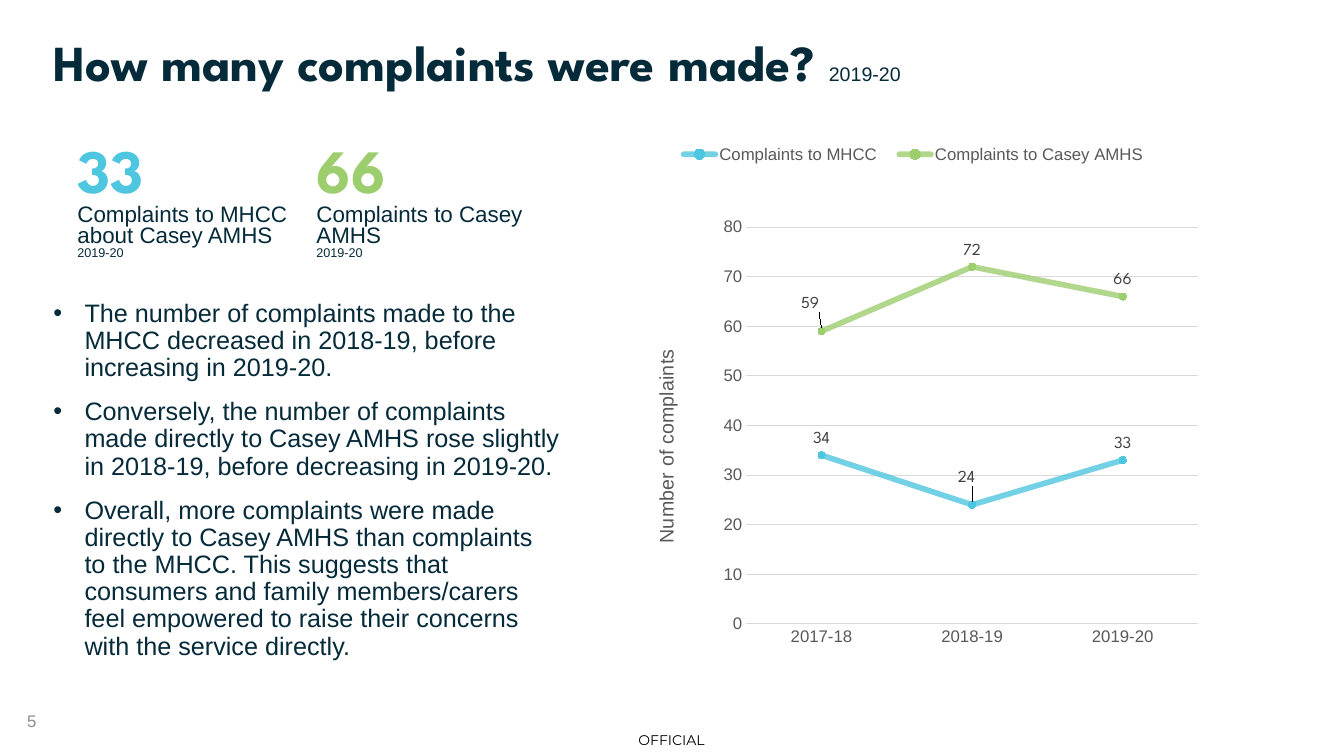
from lxml import etree
from pptx import Presentation
from pptx.chart.data import CategoryChartData
from pptx.dml.color import RGBColor
from pptx.enum.chart import (XL_CHART_TYPE, XL_LABEL_POSITION, XL_LEGEND_POSITION,
                             XL_MARKER_STYLE, XL_TICK_MARK)
from pptx.enum.text import MSO_ANCHOR, PP_ALIGN
from pptx.oxml.ns import qn
from pptx.util import Inches, Pt

MIDDLE, CENTER = MSO_ANCHOR.MIDDLE, PP_ALIGN.CENTER
ABOVE, NO_TICK = XL_LABEL_POSITION.ABOVE, XL_TICK_MARK.NONE
COLORS = {"navy": "052A39", "blue": "4FC6DF", "green": "9DCE6E", "axis": "595959",
          "grid": "D9D9D9", "label": "404040", "page": "8C8C8C", "black": "000000"}
HEADING, BODY = "League Spartan", "Arial"


def style(font, size, color, name=BODY, bold=False):
    font.size, font.name, font.bold = Pt(size), name, bold
    font.color.rgb = RGBColor.from_string(COLORS[color])


def place(parent, index, **values):
    """Give a chart part a manual layout, as its child number index."""
    for old in parent.findall(qn("c:layout")):
        parent.remove(old)
    layout = etree.Element(qn("c:layout"))
    manual = etree.SubElement(layout, qn("c:manualLayout"))
    for tag, value in values.items():
        etree.SubElement(manual, qn("c:" + tag)).set("val", str(value))
    parent.insert(index, layout)


prs = Presentation()
prs.slide_width, prs.slide_height = Inches(13.33), Inches(7.5)
slide = prs.slides.add_slide(prs.slide_layouts[6])

# Footer marking and page number
marking = slide.shapes.add_textbox(Inches(6.15), Inches(7.19), Inches(1.02), Inches(0.31)).text_frame
marking.margin_left = marking.margin_right = marking.margin_top = marking.margin_bottom = 0
marking.vertical_anchor = MIDDLE
marking.text = "OFFICIAL"
marking.paragraphs[0].alignment = CENTER
style(marking.paragraphs[0].font, 10, "black", "Montserrat")

page = slide.shapes.add_textbox(Inches(0.17), Inches(6.95), Inches(3), Inches(0.4)).text_frame
page.vertical_anchor = MIDDLE
page.text = "5"
style(page.paragraphs[0].font, 12, "page")

# Title with the year
title = slide.shapes.add_textbox(Inches(0.43), Inches(0.33), Inches(12.42), Inches(0.93)).text_frame
title.word_wrap = True
heading = title.paragraphs[0]
heading.line_spacing = 0.9
for text, size, face, bold in (("How many complaints were made? ", 36, HEADING, True),
                               ("2019-20", 14, BODY, False)):
    run = heading.add_run()
    run.text = text
    style(run.font, size, "navy", face, bold)

# Key figures
figures = [("33", "Complaints to MHCC about Casey AMHS ", "blue", False),
           ("66", "Complaints to Casey AMHS ", "green", True)]
for i, (number, caption, color, year_on_new_line) in enumerate(figures):
    figure = slide.shapes.add_textbox(Inches(0.67 + 2.37 * i), Inches(1.4),
                                      Inches(2.37), Inches(1.24)).text_frame
    figure.word_wrap = True
    figure.text = number
    style(figure.paragraphs[0].font, 44, color, HEADING, True)
    description = figure.add_paragraph()
    for text, size in ((caption, 16), ("2019-20", 9)):
        if size == 9 and year_on_new_line:
            description.add_line_break()
        run = description.add_run()
        run.text = text
        style(run.font, size, "navy")
    for paragraph in figure.paragraphs:
        paragraph.line_spacing = 0.8

# Findings
findings = [
    "The number of complaints made to the MHCC decreased in 2018-19, before increasing in 2019-20.",
    "Conversely, the number of complaints made directly to Casey AMHS rose slightly in 2018-19, "
    "before decreasing in 2019-20.",
    "Overall, more complaints were made directly to Casey AMHS than complaints to the MHCC. "
    "This suggests that consumers and family members/carers feel empowered to raise their "
    "concerns with the service directly.",
]
body = slide.shapes.add_textbox(Inches(0.43), Inches(2.93), Inches(5.22), Inches(4.01)).text_frame
body.word_wrap = True
for i, text in enumerate(findings):
    finding = body.add_paragraph() if i else body.paragraphs[0]
    finding.text = text
    finding.line_spacing = 0.9
    finding.space_before, finding.space_after = Pt(6 if i else 0), Pt(6)
    properties = finding._p.get_or_add_pPr()
    properties.set("marL", str(Inches(0.31)))
    properties.set("indent", str(-Inches(0.31)))
    etree.SubElement(properties, qn("a:buFont")).set("typeface", BODY)
    etree.SubElement(properties, qn("a:buChar")).set("char", "•")
    style(finding.font, 18, "navy")

# Line chart
data = CategoryChartData()
data.categories = ["2017-18", "2018-19", "2019-20"]
data.add_series("Complaints to MHCC", (34, 24, 33))
data.add_series("Complaints to Casey AMHS", (59, 72, 66))
chart = slide.shapes.add_chart(XL_CHART_TYPE.LINE_MARKERS, Inches(6.39), Inches(1.26),
                               Inches(5.68), Inches(5.43), data).chart
style(chart.font, 10, "black")
chart.has_title = False
plot_area = chart._chartSpace.chart.plotArea
place(plot_area, 0, layoutTarget="inner", xMode="edge", yMode="edge",
      x=0.178, y=0.183, w=0.789, h=0.725)

# Legend above the plot
chart.has_legend = True
chart.legend.position = XL_LEGEND_POSITION.BOTTOM
chart.legend.include_in_layout = False
style(chart.legend.font, 12, "axis")
place(chart.legend._element, 1, xMode="edge", yMode="edge", x=0.04, y=0.02, w=0.86, h=0.06)

# Axes
years, counts = chart.category_axis, chart.value_axis
for axis in (years, counts):
    axis.major_tick_mark = axis.minor_tick_mark = NO_TICK
    style(axis.tick_labels.font, 12, "axis")
counts.minimum_scale, counts.maximum_scale, counts.major_unit = 0, 80, 10
counts.format.line.fill.background()
for line in (years.format.line, counts.major_gridlines.format.line):
    line.color.rgb = RGBColor.from_string(COLORS["grid"])
    line.width = Pt(0.75)
counts_title = counts.axis_title
counts_title.text_frame.text = "Number of complaints"
style(counts_title.text_frame.paragraphs[0].font, 14, "axis")
turned = counts_title._element.find(".//" + qn("a:bodyPr"))
turned.set("rot", "-5400000")
turned.set("vert", "horz")
place(counts_title._element, 1, xMode="edge", yMode="edge", x=0.01, y=0.4)

# Series, each with one label moved away from its line
moved_labels = [("blue", 1, -0.01, -0.02), ("green", 0, -0.02, -0.02)]
for series, (color, point, dx, dy) in zip(chart.plots[0].series, moved_labels):
    rgb = RGBColor.from_string(COLORS[color])
    series.smooth = False
    series.format.line.width = Pt(4)
    series.format.line.color.rgb = rgb
    stroke = series._element.spPr.find(".//" + qn("a:srgbClr"))
    etree.SubElement(stroke, qn("a:alpha")).set("val", "80000")
    series._element.spPr.find(qn("a:ln")).set("cap", "rnd")
    series.marker.style, series.marker.size = XL_MARKER_STYLE.CIRCLE, 5
    series.marker.format.fill.solid()
    series.marker.format.fill.fore_color.rgb = rgb
    series.marker.format.line.color.rgb = rgb
    labels = series.data_labels
    labels.show_value = True
    moved = series.points[point].data_label
    for label in (labels, moved):
        label.position = ABOVE
        style(label.font, 12, "label", HEADING)
    moved_element = labels._element.find(qn("c:dLbl"))
    place(moved_element, 1, x=dx, y=dy)

prs.save("out.pptx")
